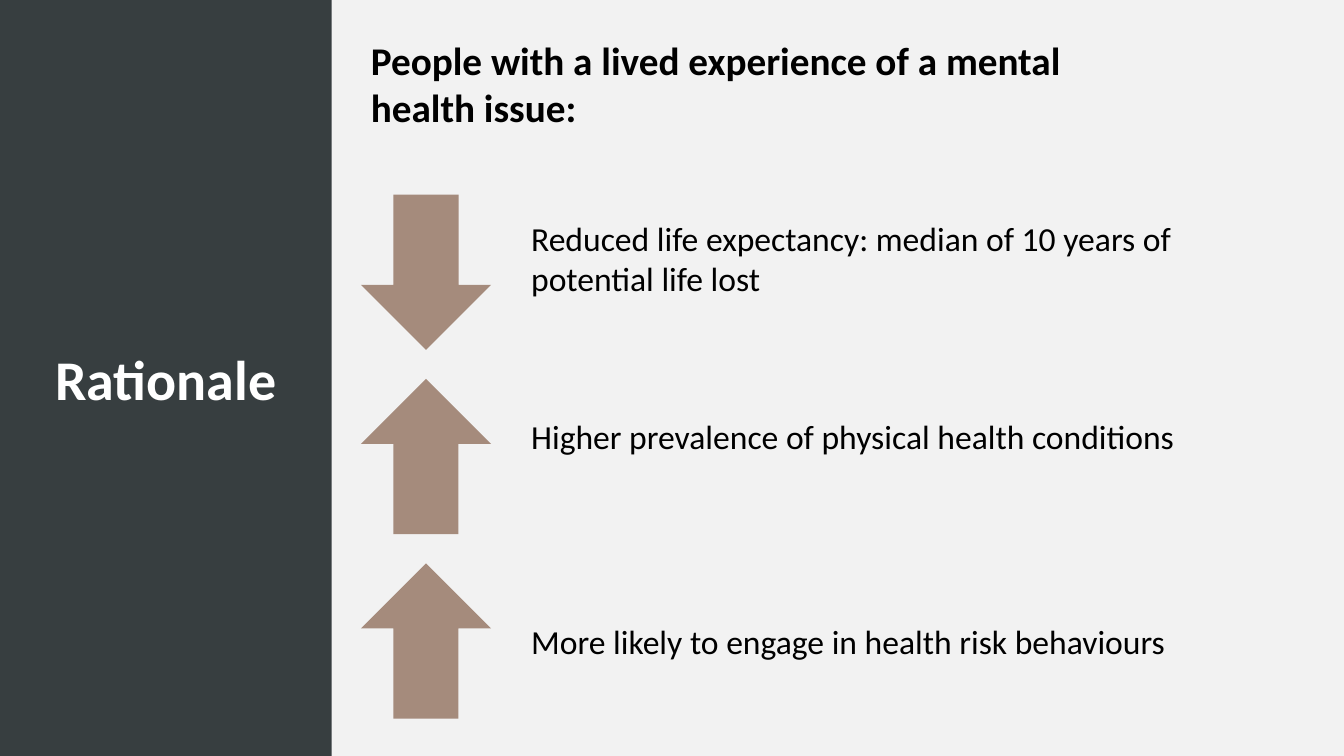
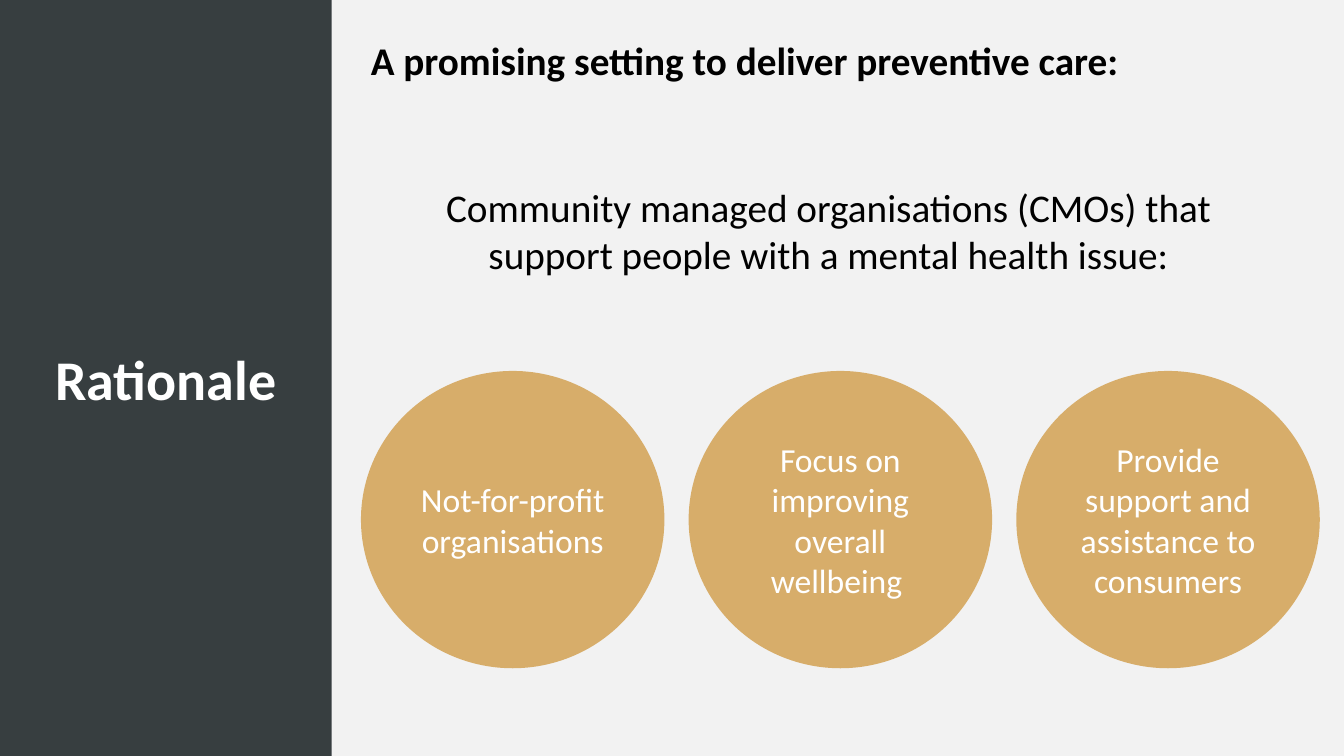
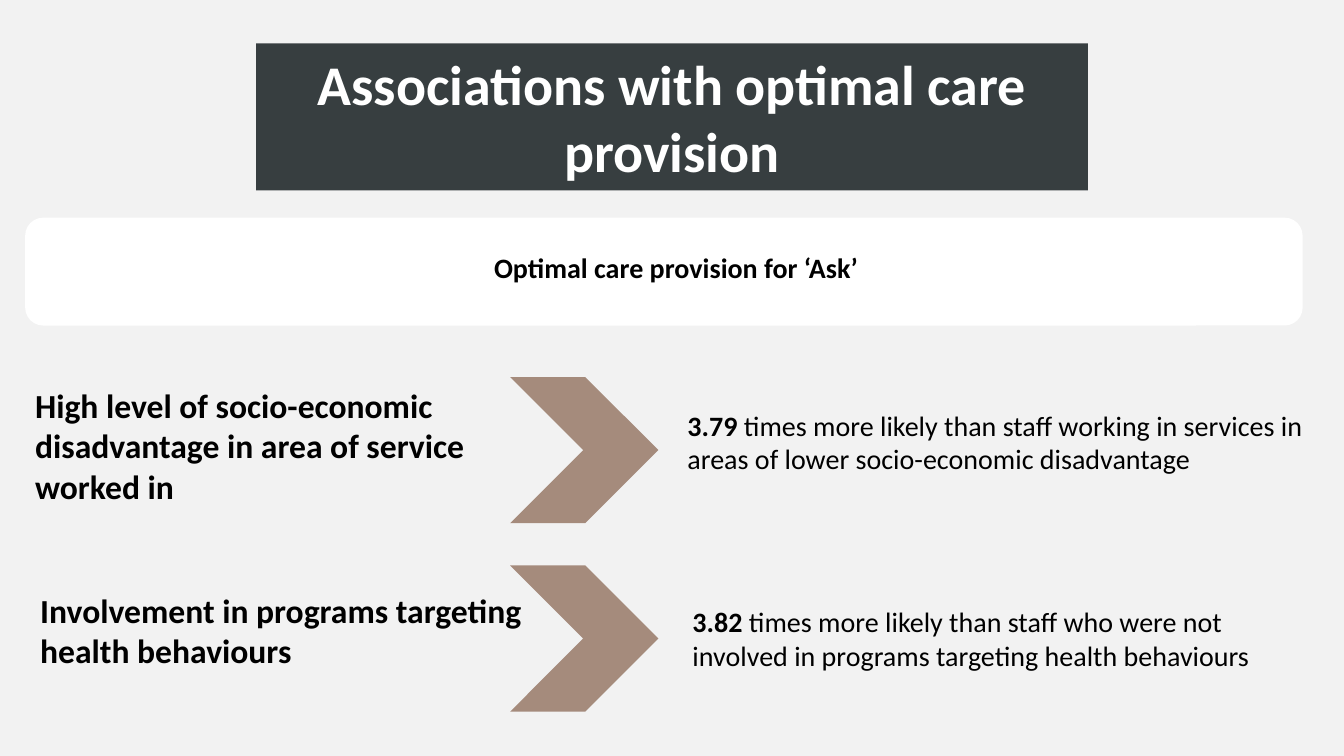
from pptx import Presentation
from pptx.dml.color import RGBColor
from pptx.enum import shapes, text
from pptx.util import Inches, Pt

COLOURS = {"page": "F2F2F2", "slate": "373E40", "taupe": "A58B7C",
           "gold": "D7AD6A", "white": "FFFFFF", "black": "000000"}
FONT = "Calibri"
LEFT, CENTRE = text.PP_ALIGN.LEFT, text.PP_ALIGN.CENTER
SHAPE = shapes.MSO_SHAPE


def add_block(slide, kind, box, fill, words="", size=24, bold=False):
    """Filled shape without outline, with optional centred white text."""
    block = slide.shapes.add_shape(kind, *[Inches(n) for n in box])
    block.shadow.inherit = False
    block.fill.solid()
    block.fill.fore_color.rgb = RGBColor.from_string(COLOURS[fill])
    block.line.fill.background()
    if words:
        write(block.text_frame, [(words, bold)], size, "white", CENTRE)
        block.text_frame.vertical_anchor = text.MSO_ANCHOR.MIDDLE
    return block


def write(frame, pieces, size, colour="black", align=LEFT, before=0):
    """One paragraph made of (words, bold) pieces."""
    frame.word_wrap = True
    paragraph = frame.paragraphs[0]
    paragraph.alignment = align
    paragraph.space_before = Pt(before)
    for words, bold in pieces:
        run = paragraph.add_run()
        run.text = words
        run.font.name = FONT
        run.font.size = Pt(size)
        run.font.bold = bold
        run.font.color.rgb = RGBColor.from_string(COLOURS[colour])


deck = Presentation()
deck.slide_width, deck.slide_height = Inches(13.33), Inches(7.5)

# Pages share one background
pages = []
for _ in range(3):
    page = deck.slides.add_slide(deck.slide_layouts[6])
    page.background.fill.solid()
    page.background.fill.fore_color.rgb = RGBColor.from_string(COLOURS["page"])
    pages.append(page)
health, setting, associations = pages

# Side band and heading of the two rationale slides
for page, heading in [
    (health, "People with a lived experience of a mental health issue:"),
    (setting, "A promising setting to deliver preventive care:"),
]:
    add_block(page, SHAPE.RECTANGLE, (0, 0, 3.29, 7.5), "slate", "Rationale", 40, True)
    heading_box = page.shapes.add_textbox(Inches(3.58), Inches(0.31), Inches(8.08), Inches(1.04))
    write(heading_box.text_frame, [(heading, True)], 28, before=10)

# Slide 1: arrows with findings
findings = [
    (180, 2.11, "Reduced life expectancy: median of 10 years of potential life lost"),
    (0, 4.08, "Higher prevalence of physical health conditions"),
    (0, 6.11, "More likely to engage in health risk behaviours"),
]
for row, (turn, top, finding) in enumerate(findings):
    arrow = add_block(health, SHAPE.UP_ARROW, (3.58, 1.93 + row * 1.83, 1.29, 1.54), "taupe")
    arrow.rotation = turn
    finding_box = health.shapes.add_textbox(Inches(5.17), Inches(top), Inches(6.7), Inches(0.5))
    write(finding_box.text_frame, [(finding, False)], 24)

# Slide 2: introduction and three circles
intro = setting.shapes.add_textbox(Inches(3.82), Inches(1.77), Inches(8.79), Inches(1.2))
write(intro.text_frame,
      [("Community managed organisations (CMOs) that support people with a mental health issue:", False)],
      28, align=CENTRE, before=10)
features = ["Not-for-profit organisations",
            "Focus on improving overall wellbeing ",
            "Provide support and assistance to consumers"]
for column, feature in enumerate(features):
    add_block(setting, SHAPE.OVAL, (3.58 + column * 3.25, 3.68, 3.01, 2.95), "gold", feature)

# Slide 3: title and outcome band
add_block(associations, SHAPE.RECTANGLE, (2.54, 0.43, 8.25, 1.46), "slate",
          "Associations with optimal care provision", 40, True)
add_block(associations, SHAPE.ROUNDED_RECTANGLE, (0.25, 2.16, 12.67, 1.07), "white")
outcome = associations.shapes.add_textbox(Inches(0.55), Inches(2.44), Inches(12.31), Inches(0.44))
write(outcome.text_frame, [("Optimal care provision for ‘Ask’", True)], 20, align=CENTRE)

# Slide 3: factor, chevron and likelihood in each row
factors = [
    (3.74, 0.25, 3.77, "High level of socio-economic disadvantage in area of service worked in",
     6.72, 4.0, "3.79",
     " times more likely than staff working in services in areas of lower socio-economic disadvantage"),
    (5.61, 0.3, 5.8, "Involvement in programs targeting health behaviours",
     6.77, 5.95, "3.82",
     " times more likely than staff who were not involved in programs targeting health behaviours"),
]
for chevron_top, left, top, factor, odds_left, odds_top, odds, meaning in factors:
    add_block(associations, SHAPE.CHEVRON, (5.06, chevron_top, 1.47, 1.45), "taupe")
    factor_box = associations.shapes.add_textbox(Inches(left), Inches(top), Inches(5.15), Inches(1.25))
    write(factor_box.text_frame, [(factor, True)], 24)
    odds_box = associations.shapes.add_textbox(Inches(odds_left), Inches(odds_top), Inches(6.4), Inches(0.77))
    write(odds_box.text_frame, [(odds, True), (meaning, False)], 20)

deck.save("out.pptx")
